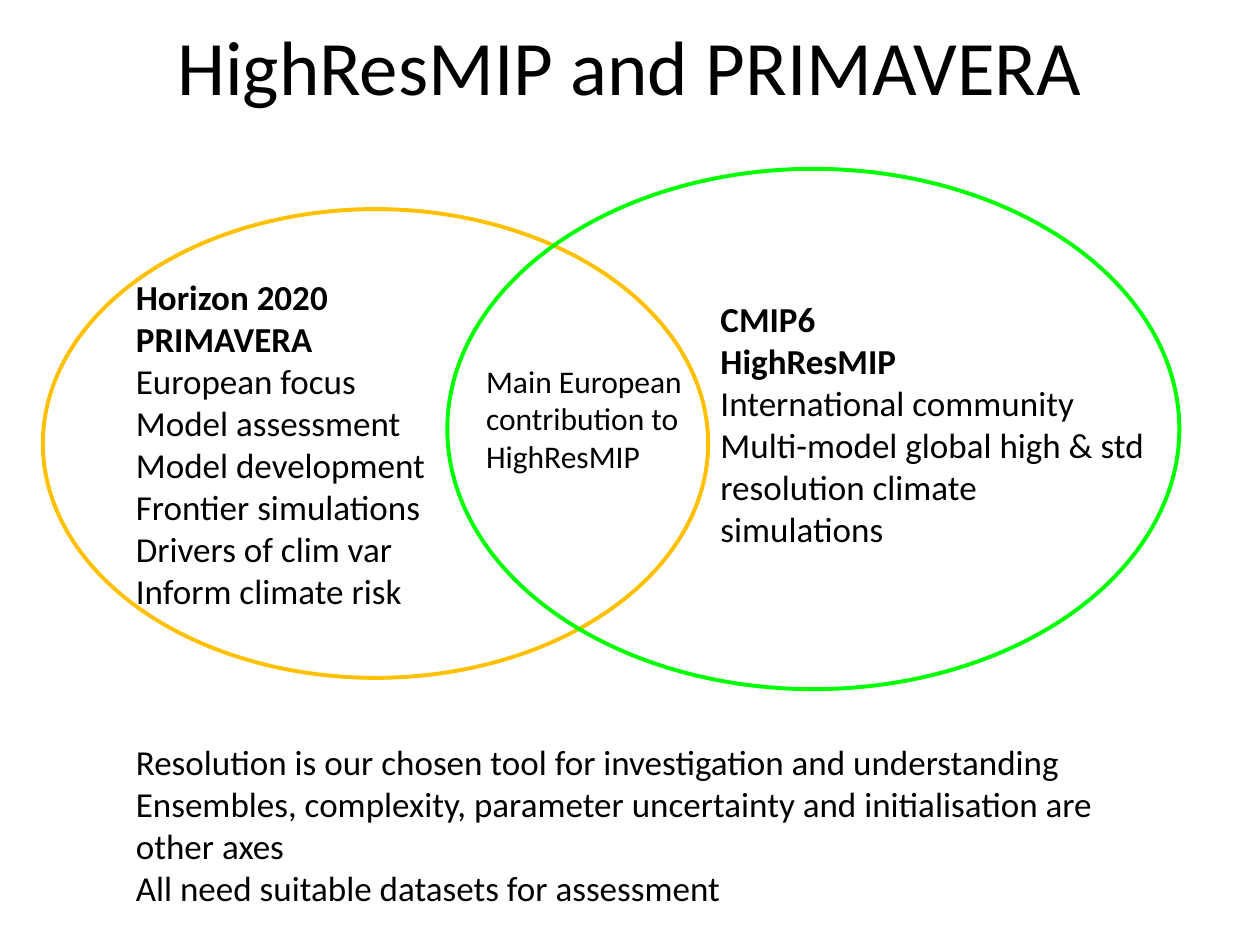
from dataclasses import dataclass

from pptx import Presentation
from pptx.dml.color import RGBColor
from pptx.enum.shapes import MSO_SHAPE as Preset
from pptx.enum.text import MSO_ANCHOR as Anchor, MSO_AUTO_SIZE as AutoSize, PP_ALIGN as Align
from pptx.slide import Slide
from pptx.text.text import TextFrame
from pptx.util import Inches, Pt

COLOURS = {"ink": "000000", "primavera": "FFC000", "highresmip": "00FF00"}
FONT = "Calibri"
WIDTH, HEIGHT = 10, 7.5
NOTE_LEFT = 0.98
OVERLAP_RIGHT = 5.62


@dataclass(frozen=True)
class Box:
    left: float
    top: float
    width: float
    height: float

    def emu(self) -> tuple[int, int, int, int]:
        """Return the box as slide lengths."""
        return tuple(Inches(n) for n in (self.left, self.top, self.width, self.height))


@dataclass(frozen=True)
class Circle:
    box: Box
    colour: str


@dataclass(frozen=True)
class Note:
    box: Box
    lines: tuple[str, ...]
    headings: int = 0
    size: int = 20
    wrap: bool = True


CIRCLES = (
    Circle(Box(0.34, 1.66, OVERLAP_RIGHT - 0.34, 3.72), "primavera"),
    Circle(Box(3.55, 1.34, 5.81, 4.13), "highresmip"),
)

NOTES = (
    Note(
        Box(NOTE_LEFT, 2.14, 2.65, 2.79),
        (
            "Horizon 2020",
            "PRIMAVERA",
            "European focus",
            "Model assessment",
            "Model development",
            "Frontier simulations",
            "Drivers of clim var",
            "Inform climate risk",
        ),
        headings=2,
        wrap=False,
    ),
    Note(
        Box(OVERLAP_RIGHT, 2.31, 3.57, 2.12),
        (
            "CMIP6",
            "HighResMIP",
            "International community",
            "Multi-model global high & std resolution climate simulations",
        ),
        headings=2,
    ),
    Note(
        Box(3.76, 2.82, OVERLAP_RIGHT - 3.76, 1.01),
        ("Main European", "contribution to", "HighResMIP"),
        size=18,
        wrap=False,
    ),
    Note(
        Box(NOTE_LEFT, 5.83, 8.22, 1.45),
        (
            "Resolution is our chosen tool for investigation and understanding",
            "Ensembles, complexity, parameter uncertainty and initialisation are other axes",
            "All need suitable datasets for assessment",
        ),
    ),
)


def write_lines(frame: TextFrame, lines: tuple[str, ...], size: int, headings: int, align: Align) -> None:
    """Write one paragraph per line, with the leading headings in bold."""
    for index, line in enumerate(lines):
        paragraph = frame.add_paragraph() if index else frame.paragraphs[0]
        paragraph.alignment = align
        run = paragraph.add_run()
        run.text = line
        run.font.name = FONT
        run.font.size = Pt(size)
        run.font.bold = index < headings
        run.font.color.rgb = RGBColor.from_string(COLOURS["ink"])


def draw_title(slide: Slide, text: str, box: Box) -> None:
    """Place and fill the title placeholder."""
    title = slide.shapes.title
    title.left, title.top, title.width, title.height = box.emu()
    title.text_frame.vertical_anchor = Anchor.MIDDLE
    write_lines(title.text_frame, (text,), 44, 0, Align.CENTER)


def draw_circle(slide: Slide, circle: Circle) -> None:
    """Draw one unfilled ellipse of the Venn diagram."""
    ellipse = slide.shapes.add_shape(Preset.OVAL, *circle.box.emu())
    ellipse.shadow.inherit = False
    ellipse.fill.background()
    ellipse.line.color.rgb = RGBColor.from_string(COLOURS[circle.colour])
    ellipse.line.width = Pt(2.25)


def draw_note(slide: Slide, note: Note) -> None:
    """Draw one text box that grows with its text."""
    frame = slide.shapes.add_textbox(*note.box.emu()).text_frame
    frame.word_wrap = note.wrap
    frame.auto_size = AutoSize.SHAPE_TO_FIT_TEXT
    write_lines(frame, note.lines, note.size, note.headings, Align.LEFT)


def main() -> None:
    """Build and save the slide."""
    deck = Presentation()
    deck.slide_width, deck.slide_height = Inches(WIDTH), Inches(HEIGHT)
    slide = deck.slides.add_slide(deck.slide_layouts.get_by_name("Title Only"))
    draw_title(slide, "HighResMIP and PRIMAVERA", Box(WIDTH * 0.05, 0, WIDTH * 0.9, 1.02))
    for circle in CIRCLES:
        draw_circle(slide, circle)
    for note in NOTES:
        draw_note(slide, note)
    deck.save("out.pptx")


if __name__ == "__main__":
    main()
